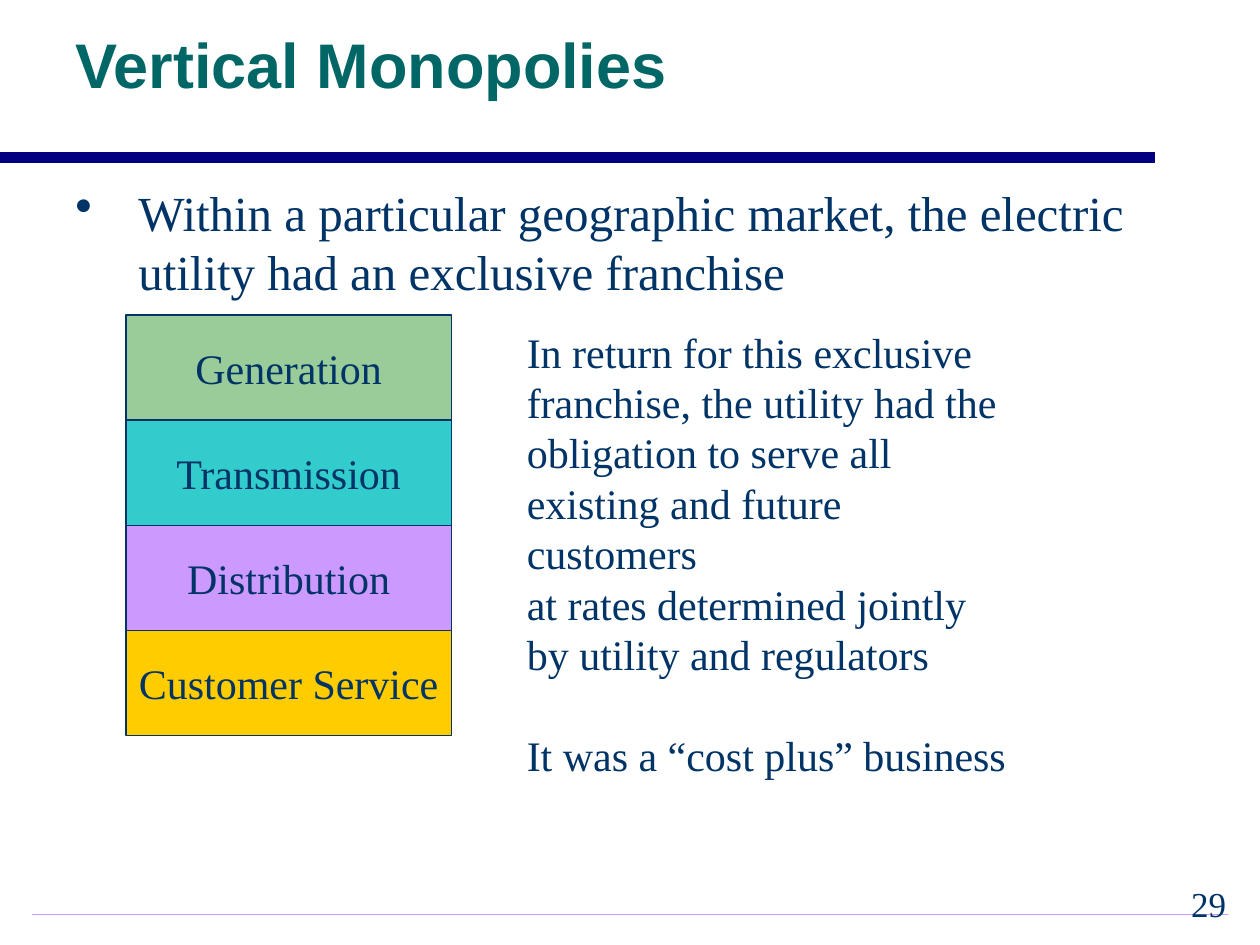
import pptx
import pptx.util
import pptx.dml.color
import pptx.enum.shapes
import pptx.enum.text
import pptx.oxml
import pptx.oxml.ns
from lxml import etree

Cm, Pt = pptx.util.Cm, pptx.util.Pt
RGB = pptx.dml.color.RGBColor
ALIGN, ANCHOR = pptx.enum.text.PP_ALIGN, pptx.enum.text.MSO_ANCHOR
SHAPE = pptx.enum.shapes.MSO_SHAPE
qn = pptx.oxml.ns.qn

# Content
TITLE = "Vertical Monopolies"
BULLET = ("Within a particular geographic market, "
          "the electric utility had an exclusive franchise")
OBLIGATION = [
    "In return for this exclusive",
    "franchise, the utility had the",
    "obligation to serve all",
    "existing and future customers",
    "at rates determined jointly",
    "by utility and regulators",
]
CONCLUSION = "It was a “cost plus” business"
STAGES = [
    ("Generation", RGB(0x99, 0xCC, 0x99)),
    ("Transmission", RGB(0x33, 0xCC, 0xCC)),
    ("Distribution", RGB(0xCC, 0x99, 0xFF)),
    ("Customer Service", RGB(0xFF, 0xCC, 0x00)),
]
PAGE = "29"

# Style
NAVY = RGB(0x00, 0x33, 0x66)
TEAL = RGB(0x00, 0x66, 0x66)
BAR_BLUE = RGB(0x00, 0x00, 0x80)
LILAC = RGB(0xCC, 0x99, 0xFF)
PALE_LILAC = RGB(0xF3, 0xEB, 0xFF)
SERIF, SANS = "Times New Roman", "Arial"

# Stack of stages
STACK_LEFT, STACK_TOP = Cm(2.54), Cm(6.35)
STAGE_W, STAGE_H = Cm(6.56), Cm(2.12)

prs = pptx.Presentation()
prs.slide_width, prs.slide_height = Cm(25.4), Cm(19.05)
s = prs.slides.add_slide(prs.slide_layouts[6])


def add_run(p, text, size, color=NAVY, font=SERIF, bold=False):
    r = p.add_run()
    r.text = text
    r.font.size, r.font.name, r.font.bold = Pt(size), font, bold
    r.font.color.rgb = color


def add_box(left, top, width, height, anchor=ANCHOR.TOP, wrap=True):
    tf = s.shapes.add_textbox(Cm(left), Cm(top), Cm(width), Cm(height)).text_frame
    tf.word_wrap, tf.vertical_anchor = wrap, anchor
    return tf


# Footer rule, fading from its centre
sp = s.shapes.add_shape(SHAPE.RECTANGLE, Cm(0.64), Cm(18.42), Cm(24.13), Cm(0.03))
sp.shadow.inherit = False
sp.line.fill.background()
sp.fill.gradient()
for stop, color in zip(sp.fill.gradient_stops, (LILAC, PALE_LILAC)):
    stop.color.rgb = color
grad = sp._element.spPr.find(qn("a:gradFill"))
grad.remove(grad.find(qn("a:lin")))
shade = etree.SubElement(grad, qn("a:path"), path="shape")
etree.SubElement(shade, qn("a:fillToRect"), l="50000", t="50000", r="50000", b="50000")

# Bar under the title
bar = s.shapes.add_connector(pptx.enum.shapes.MSO_CONNECTOR.STRAIGHT,
                             Cm(0), Cm(3.18), Cm(23.28), Cm(3.18))
bar.line.color.rgb, bar.line.width = BAR_BLUE, Pt(6)
etree.SubElement(bar._element.spPr, qn("a:effectLst"))

# Title
p = add_box(1.27, 0.2, 22.23, 2.34, ANCHOR.MIDDLE).paragraphs[0]
p.line_spacing = 0.9
add_run(p, TITLE, 36, TEAL, SANS, True)

# Bullet
p = add_box(1.27, 3.56, 22.23, 12.9).paragraphs[0]
pPr = p._p.get_or_add_pPr()
pPr.set("marL", str(Cm(1.27)))
pPr.set("indent", str(-Cm(1.27)))
bu_color = etree.SubElement(pPr, qn("a:buClr"))
etree.SubElement(bu_color, qn("a:srgbClr"), val=str(NAVY))
etree.SubElement(pPr, qn("a:buChar"), char="•")
add_run(p, BULLET, 28)

# Stages of the vertical monopoly, grouped
group = s.shapes.add_group_shape()
for i, (name, color) in enumerate(STAGES):
    sp = group.shapes.add_shape(SHAPE.RECTANGLE, STACK_LEFT, STACK_TOP + i * STAGE_H,
                                STAGE_W, STAGE_H)
    sp.shadow.inherit = False
    sp.fill.solid()
    sp.fill.fore_color.rgb = color
    sp.line.color.rgb, sp.line.width = NAVY, Pt(0.75)
    tf = sp.text_frame
    tf.word_wrap, tf.vertical_anchor = False, ANCHOR.MIDDLE
    tf.paragraphs[0].alignment = ALIGN.CENTER
    add_run(tf.paragraphs[0], name, 24)

# Terms of the franchise
tf = add_box(10.37, 6.45, 10.49, 8.38, wrap=False)
for i, line in enumerate(OBLIGATION + [CONCLUSION]):
    p = tf.add_paragraph() if i else tf.paragraphs[0]
    add_run(p, line, 24)
p.space_before = Pt(28.8)

# Page number
p = add_box(19.69, 17.58, 5.28, 1.27, ANCHOR.MIDDLE, wrap=False).paragraphs[0]
p.alignment = ALIGN.RIGHT
add_run(p, PAGE, 20)

prs.save("out.pptx")
